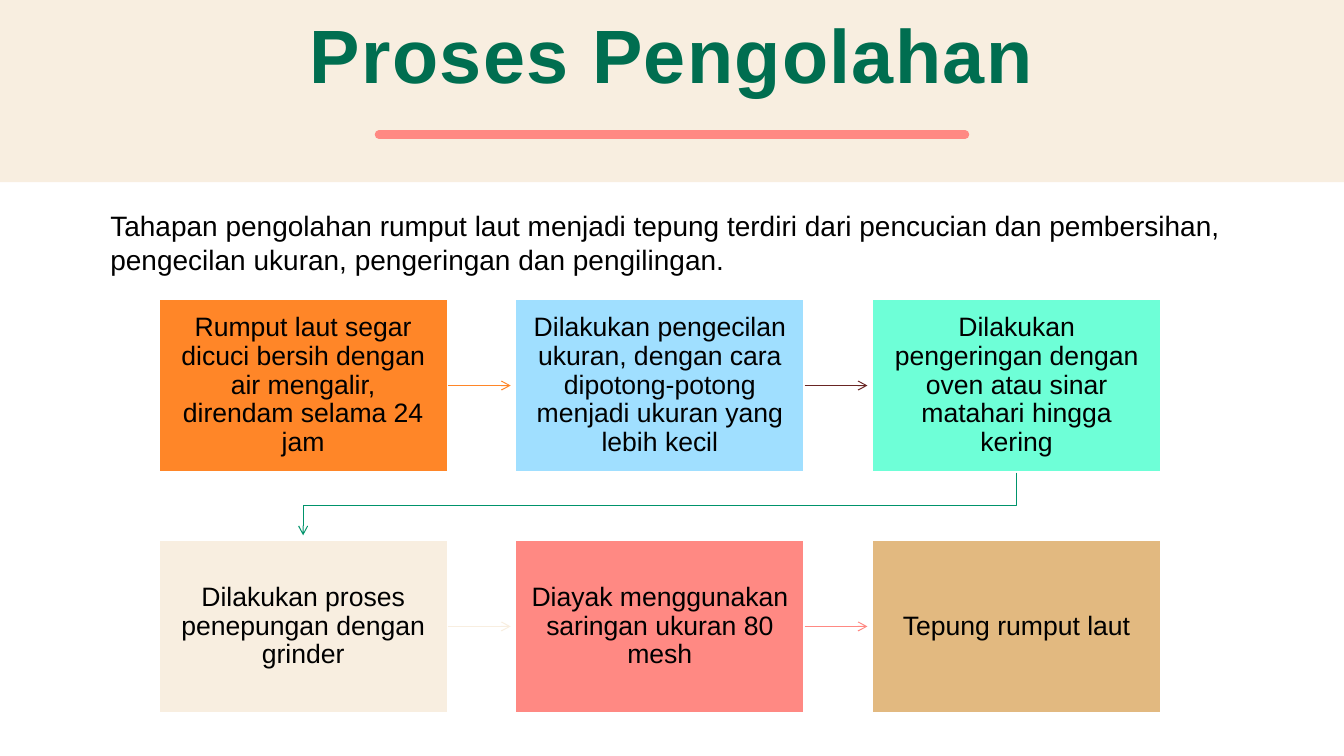
"""Build the slide on processing seaweed into flour."""
from lxml.etree import SubElement
from pptx import Presentation
from pptx.dml.color import RGBColor
from pptx.enum.shapes import MSO_CONNECTOR, MSO_SHAPE
from pptx.enum.text import MSO_ANCHOR, PP_ALIGN
from pptx.oxml.ns import qn
from pptx.util import Cm, Pt


def rgb(value):
    return RGBColor.from_string(value)


def style_line(sp, color, width, **ends):
    sp.line.color.rgb = rgb(color)
    sp.line.width = Pt(width)
    ln = sp.line._ln
    if "cap" in ends:
        ln.set("cap", ends["cap"])
    if "tail" in ends:
        SubElement(ln, qn("a:tailEnd"), type=ends["tail"])
    if sp._element.spPr.find(qn("a:effectLst")) is None:
        SubElement(sp._element.spPr, qn("a:effectLst"))


prs = Presentation()
prs.slide_width, prs.slide_height = Cm(33.87), Cm(19.05)
s = prs.slides.add_slide(prs.slide_layouts[6])

band = s.shapes.add_shape(MSO_SHAPE.RECTANGLE, 0, Cm(-0.13), prs.slide_width, Cm(4.72))
band.shadow.inherit = False
band.fill.solid()
band.fill.fore_color.rgb = rgb("F8EEE0")
band.line.fill.background()

rule = s.shapes.add_connector(MSO_CONNECTOR.STRAIGHT, Cm(9.55), Cm(3.39), Cm(24.32), Cm(3.39))
style_line(rule, "FF8983", 6, cap="rnd")

texts = [
    ("Proses Pengolahan", (1.69, 0.2, 30.48, 2.62), "006E50",
     {"size": Pt(54), "bold": True},
     {"alignment": PP_ALIGN.CENTER, "line_spacing": 0.85, "space_after": Pt(6)},
     MSO_ANCHOR.MIDDLE, 100),
    ("Tahapan pengolahan rumput laut menjadi tepung terdiri dari pencucian dan pembersihan, "
     "pengecilan ukuran, pengeringan dan pengilingan.", (2.53, 5.13, 30, 1.96), "000000",
     {"size": Pt(20)}, {"alignment": PP_ALIGN.LEFT}, MSO_ANCHOR.TOP, 0),
]
for text, place, color, font, para, anchor, spacing in texts:
    tf = s.shapes.add_textbox(*map(Cm, place)).text_frame
    tf.word_wrap = True
    tf.vertical_anchor = anchor
    p = tf.paragraphs[0]
    for name, value in para.items():
        setattr(p, name, value)
    r = p.add_run()
    r.text = text
    for name, value in {"name": "Arial", **font}.items():
        setattr(r.font, name, value)
    r.font.color.rgb = rgb(color)
    r.font._element.set("spc", str(spacing))

LEFT, TOP, WIDTH, HEIGHT = 3.99, 7.52, 7.3, 4.39
STEP_X, STEP_Y, REACH = 8.99, 6.07, 1.58
steps = [
    ("Rumput laut segar dicuci bersih dengan air mengalir, direndam selama 24 jam",
     "FF8628", "FF8628"),
    ("Dilakukan pengecilan ukuran, dengan cara dipotong-potong menjadi ukuran yang lebih kecil",
     "A0DFFF", "692523"),
    ("Dilakukan pengeringan dengan oven atau sinar matahari hingga kering", "6EFFD7", "00936B"),
    ("Dilakukan proses penepungan dengan grinder", "F8EEE0", "F8EEE0"),
    ("Diayak menggunakan saringan ukuran 80 mesh", "FF8983", "FF8983"),
    ("Tepung rumput laut", "E2B980", None),
]
for i, (text, fill, arrow_color) in enumerate(steps):
    row, col = divmod(i, 3)
    x, y = LEFT + col * STEP_X, TOP + row * STEP_Y
    box = s.shapes.add_shape(MSO_SHAPE.RECTANGLE, Cm(x), Cm(y), Cm(WIDTH), Cm(HEIGHT))
    box.shadow.inherit = False
    box.fill.solid()
    box.fill.fore_color.rgb = rgb(fill)
    style_line(box, "FFFFFF", 2)
    tf = box.text_frame
    tf.word_wrap = True
    tf.vertical_anchor = MSO_ANCHOR.MIDDLE
    for side in ("left", "top", "right", "bottom"):
        setattr(tf, f"margin_{side}", Cm(0.38))
    p = tf.paragraphs[0]
    p.alignment, p.line_spacing = PP_ALIGN.CENTER, 0.9
    r = p.add_run()
    r.text = text
    r.font.name, r.font.size = "Arial", Pt(19)
    r.font.color.rgb = rgb("000000")

    if arrow_color is None:
        continue
    if col < 2:
        mid = Cm(y + HEIGHT / 2)
        arrow = s.shapes.add_connector(MSO_CONNECTOR.STRAIGHT, Cm(x + WIDTH), mid,
                                       Cm(x + WIDTH + REACH), mid)
        arrow.begin_connect(box, 3)
    else:
        start, end, bottom = x + WIDTH / 2, LEFT + WIDTH / 2, y + HEIGHT
        turn = bottom + 0.84
        fb = s.shapes.build_freeform(Cm(start), Cm(bottom))
        fb.add_line_segments([(Cm(start), Cm(turn)), (Cm(end), Cm(turn)),
                              (Cm(end), Cm(bottom + REACH))], close=False)
        arrow = fb.convert_to_shape()
        arrow.shadow.inherit = False
        arrow.fill.background()
    style_line(arrow, arrow_color, 0.75, tail="arrow")

prs.save("out.pptx")
